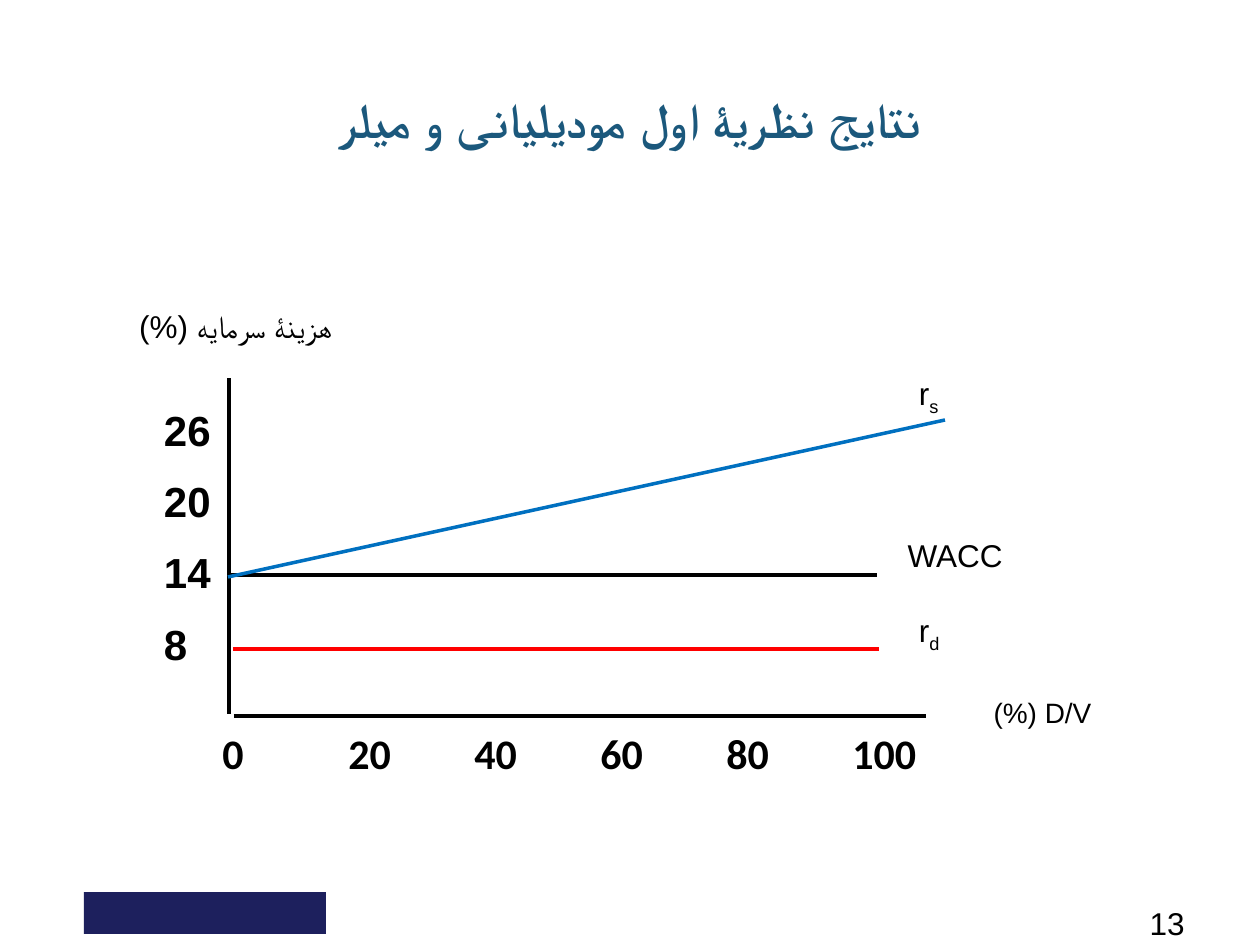
from lxml.etree import SubElement
from pptx import Presentation
from pptx.dml.color import RGBColor
from pptx.enum.shapes import MSO_CONNECTOR as CONNECTOR, MSO_SHAPE as SHAPE
from pptx.enum.text import MSO_ANCHOR as ANCHOR, PP_ALIGN as ALIGN
from pptx.oxml.ns import qn
from pptx.util import Pt

PX = 914400 / 126
BLACK = RGBColor(0x00, 0x00, 0x00)
RED = RGBColor(0xFF, 0x00, 0x00)
BLUE = RGBColor(0x00, 0x70, 0xC0)
TEAL = RGBColor(0x1B, 0x58, 0x7C)
NAVY = RGBColor(0x1D, 0x20, 0x5D)


def emu(*lengths):
    """Turn px lengths into EMU."""
    return [round(length * PX) for length in lengths]


def format_paragraph(paragraph, size, align, color=BLACK, name="Arial", bold=False, rtl=True):
    """Set direction, alignment and font of a paragraph."""
    paragraph.alignment = align
    if rtl:
        paragraph._p.get_or_add_pPr().set("rtl", "1")
    font = paragraph.font
    font.size, font.name, font.bold = Pt(size), name, bold
    font.color.rgb = color
    SubElement(font._element, qn("a:cs")).set("typeface", "Arial")


def add_text(slide, box, lines, size, align, wrap=True, **style):
    """Add a text box with one paragraph per line and return its frame."""
    frame = slide.shapes.add_textbox(*emu(*box)).text_frame
    frame.word_wrap = wrap
    frame.text = "\n".join(lines)
    for paragraph in frame.paragraphs:
        format_paragraph(paragraph, size, align, **style)
    return frame


def add_line(slide, start, end, color, width):
    """Draw a straight line between two points."""
    line = slide.shapes.add_connector(CONNECTOR.STRAIGHT, *emu(*start, *end))
    line.line.color.rgb = color
    line.line.width = Pt(width)
    SubElement(line._element.spPr, qn("a:effectLst"))


def add_title(slide, box):
    """Place the slide title."""
    title = slide.shapes.title
    title.left, title.top, title.width, title.height = emu(*box)
    frame = title.text_frame
    frame.vertical_anchor = ANCHOR.MIDDLE
    frame.text = "نتایج نظریۀ اول مودیلیانی و میلر"
    format_paragraph(frame.paragraphs[0], 28, ALIGN.CENTER, TEAL, bold=True)


def add_axes(slide, left, top, width, height):
    """Draw both axes with their titles and tick labels."""
    bottom = top + height
    add_line(slide, (left, top), (left, bottom - 2), BLACK, 2)
    add_line(slide, (left + 5, bottom), (left + width, bottom), BLACK, 2)
    cost_title = add_text(slide, (left - 199, top - 73, 411, 47),
                          ["هزینۀ سرمایه (%)"], 18, ALIGN.CENTER)
    debt_title = add_text(slide, (left + 653, bottom - 23, 321, 43),
                          ["D/V (%)"], 16, ALIGN.CENTER)
    for axis_title in (cost_title, debt_title):
        axis_title.paragraphs[0].line_spacing = 0.9

    costs = add_text(slide, (left - 103, top + 20, 97, 292), ["26", "20", "14", "8"],
                     24, ALIGN.LEFT, name="Calibri", bold=True)
    costs.margin_left, costs.margin_right = emu(38, 0)
    for paragraph in costs.paragraphs[1:]:
        paragraph.space_before = Pt(12)

    ratios = slide.shapes.add_textbox(*emu(left - 19, bottom + 5, 1007, 63)).text_frame
    ratios.word_wrap = True
    ratios.text = "\t".join(str(ratio) for ratio in range(0, 101, 20))
    paragraph = ratios.paragraphs[0]
    tabs = SubElement(paragraph._p.get_or_add_pPr(), qn("a:tabLst"))
    for position in emu(*range(126, 631, 126)):
        SubElement(tabs, qn("a:tab"), pos=str(position), algn="l")
    format_paragraph(paragraph, 24, ALIGN.LEFT, name="Calibri", bold=True, rtl=False)


def add_series(slide, left, top):
    """Draw the three cost lines and their labels."""
    series = [
        ("r", "d", (4, 271), (650, 271), RED, 2.25, (675, 227, 48, 50)),
        ("WACC", "", (2, 197), (648, 197), BLACK, 2.25, (665, 152, 121, 50)),
        ("r", "s", (-1, 199), (716, 42), BLUE, 2, (675, -10, 47, 50)),
    ]
    for name, subscript, start, end, color, width, (x, y, w, h) in series:
        add_line(slide, (left + start[0], top + start[1]),
                 (left + end[0], top + end[1]), color, width)
        label = add_text(slide, (left + x, top + y, w, h), [name], 18, ALIGN.RIGHT, wrap=False)
        if subscript:
            run = label.paragraphs[0].add_run()
            run.text = subscript
            run._r.get_or_add_rPr().set("baseline", "-25000")


def add_footer(slide, left, top, width):
    """Place the footer bar and the slide number."""
    bar = slide.shapes.add_shape(SHAPE.RECTANGLE, *emu(left, top, 242, 42))
    bar.shadow.inherit = False
    bar.fill.solid()
    bar.fill.fore_color.rgb = NAVY
    bar.line.fill.background()
    add_text(slide, (left + width - 294, top + 6, 294, 34), ["13"], 18, ALIGN.RIGHT)


def main():
    """Build the slide and save it."""
    deck = Presentation()
    deck.slide_width, deck.slide_height = emu(1260, 945)
    slide = deck.slides.add_slide(deck.slide_layouts[5])
    add_footer(slide, 84, 892, 1113)
    add_title(slide, (94, 69, 1071, 100))
    add_axes(slide, 229, 378, 697, 338)
    add_series(slide, 229, 378)
    deck.save("out.pptx")


if __name__ == "__main__":
    main()
